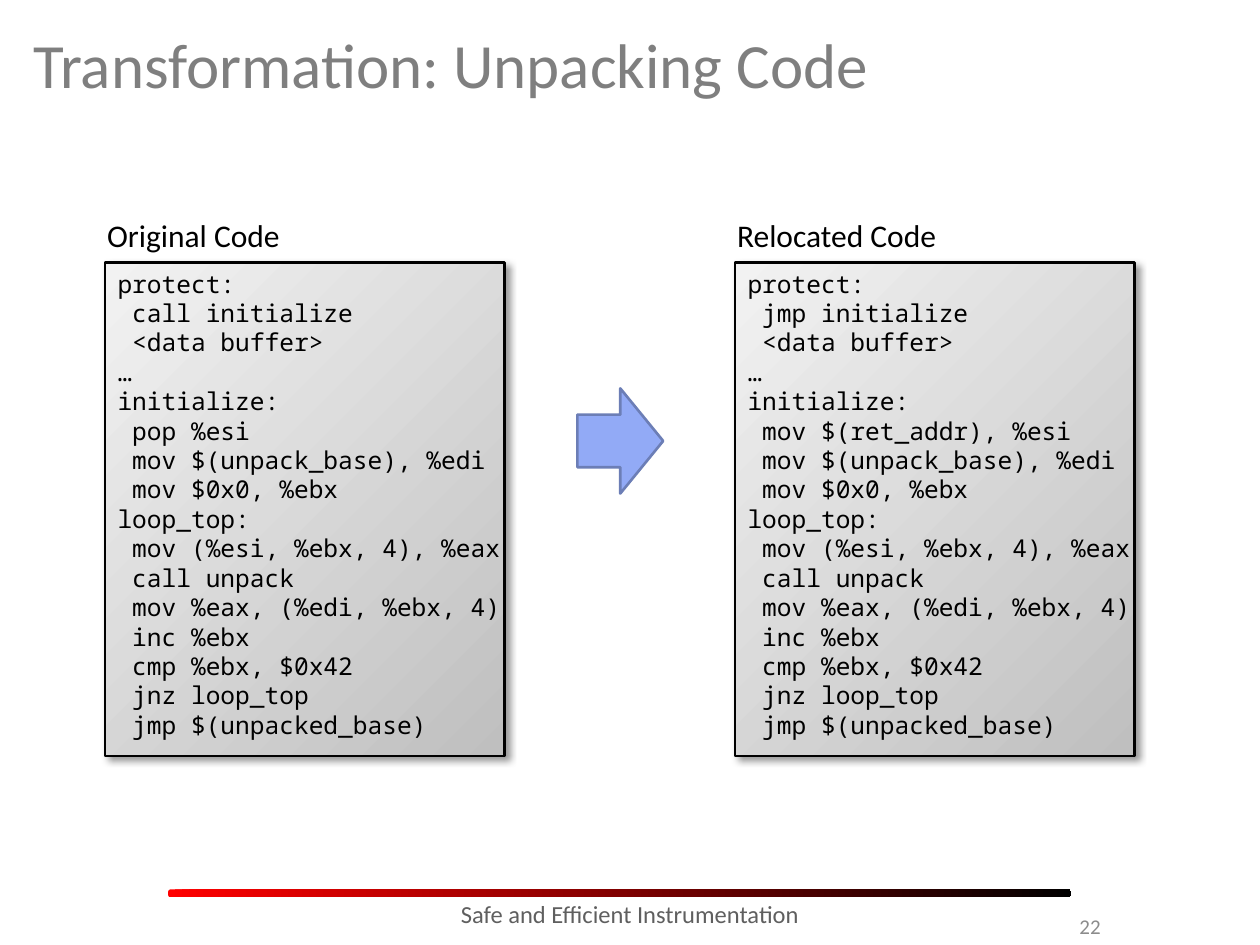
from lxml.etree import SubElement
from pptx import Presentation
from pptx.dml.color import RGBColor
from pptx.enum.shapes import MSO_SHAPE as Shape
from pptx.enum.text import MSO_ANCHOR as Anchor, PP_ALIGN as Align
from pptx.oxml.ns import qn
from pptx.util import Cm, Pt

SANS, MONO = "Calibri", "Noto Sans Mono"
PANEL_TOP, PANEL_W, PANEL_H = 5.29, 8.05, 9.95

# The two versions differ only in these two instructions
ORIGINAL = ("call initialize", "pop %esi")
RELOCATED = ("jmp initialize", "mov $(ret_addr), %esi")


def code_listing(enter, fetch):
    return f"""protect:
 {enter}
 <data buffer>
…
initialize:
 {fetch}
 mov $(unpack_base), %edi
 mov $0x0, %ebx
loop_top:
 mov (%esi, %ebx, 4), %eax
 call unpack
 mov %eax, (%edi, %ebx, 4)
 inc %ebx
 cmp %ebx, $0x42
 jnz loop_top
 jmp $(unpacked_base)"""


def color(value):
    return RGBColor.from_string(value)


def set_text(sp, text, size, hex_color, font=SANS, align=Align.LEFT, anchor=Anchor.TOP):
    tf = sp.text_frame
    tf.text = text
    tf.word_wrap = True
    tf.vertical_anchor = anchor
    for p in tf.paragraphs:
        p.alignment = align
        for r in p.runs:
            r.font.name = font
            r.font.size = Pt(size)
            r.font.color.rgb = color(hex_color)


def add_text(slide, x, y, w, h, text, size, hex_color, **options):
    sp = slide.shapes.add_textbox(Cm(x), Cm(y), Cm(w), Cm(h))
    set_text(sp, text, size, hex_color, **options)


def add_shape(slide, kind, x, y, w, h, line=None):
    sp = slide.shapes.add_shape(kind, Cm(x), Cm(y), Cm(w), Cm(h))
    sp.shadow.inherit = False
    if line:
        sp.line.color.rgb = color(line)
        sp.line.width = Pt(1.5)
    else:
        sp.line.fill.background()
    return sp


def fill_gradient(sp, start, end, angle):
    sp.fill.gradient()
    sp.fill.gradient_angle = angle
    for stop, position, value in zip(sp.fill.gradient_stops, (0, 1), (start, end)):
        stop.position = position
        stop.color.rgb = color(value)


def add_shadow(sp):
    effects = sp._element.spPr.find(qn("a:effectLst"))
    shadow = SubElement(effects, qn("a:outerShdw"), blurRad=str(Pt(4)), dist=str(Pt(3)),
                        dir="2700000", algn="tl", rotWithShape="0")
    black = SubElement(shadow, qn("a:srgbClr"), val="000000")
    SubElement(black, qn("a:alpha"), val="40000")


def add_code_panel(slide, x, label, code):
    add_text(slide, x - 0.21, 4.23, 4.87, 1.02, label, 18, "000000")
    panel = add_shape(slide, Shape.RECTANGLE, x, PANEL_TOP, PANEL_W, PANEL_H, line="000000")
    fill_gradient(panel, "F2F2F2", "BFBFBF", 315)
    add_shadow(panel)
    add_text(slide, x, PANEL_TOP, 8.26, 9.83, code, 14, "000000", font=MONO)


def add_footer(slide):
    bar = add_shape(slide, Shape.ROUNDED_RECTANGLE, 3.39, 17.93, 18.2, 0.16)
    bar.adjustments[0] = 0.33
    fill_gradient(bar, "FF0000", "000000", 0)
    add_text(slide, 6.14, 17.99, 13.12, 1.02, "Safe and Efficient Instrumentation",
             14, "5F5F5F", align=Align.CENTER)
    add_text(slide, 19.05, 18.17, 3.39, 1.02, "22", 12, "8C8C8C",
             align=Align.RIGHT, anchor=Anchor.MIDDLE)


def main():
    prs = Presentation()
    prs.slide_width, prs.slide_height = Cm(25.4), Cm(19.05)
    slide = prs.slides.add_slide(prs.slide_layouts[5])

    # Title
    title = slide.shapes.title
    title.left, title.top, title.width, title.height = Cm(0.42), Cm(0.21), Cm(24.55), Cm(2.12)
    set_text(title, "Transformation: Unpacking Code", 36, "7F7F7F", anchor=Anchor.MIDDLE)

    # Code before and after, with the arrow between
    add_code_panel(slide, 2.12, "Original Code", code_listing(*ORIGINAL))
    add_code_panel(slide, 14.82, "Relocated Code", code_listing(*RELOCATED))
    arrow = add_shape(slide, Shape.RIGHT_ARROW, 11.64, 7.83, 1.73, 2.12, line="6C7EB6")
    arrow.fill.solid()
    arrow.fill.fore_color.rgb = color("92AAF6")

    add_footer(slide)
    prs.save("out.pptx")


if __name__ == "__main__":
    main()
